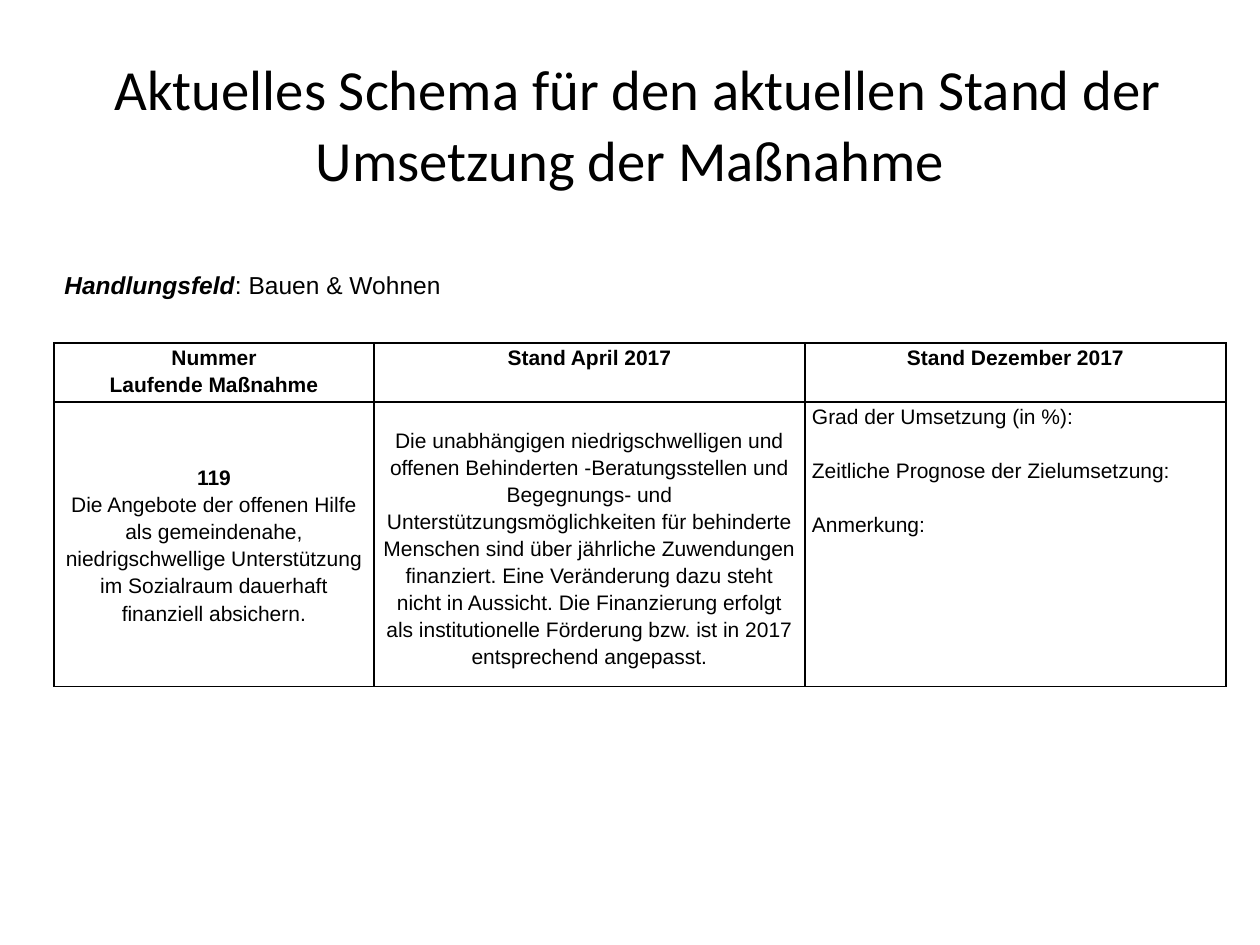
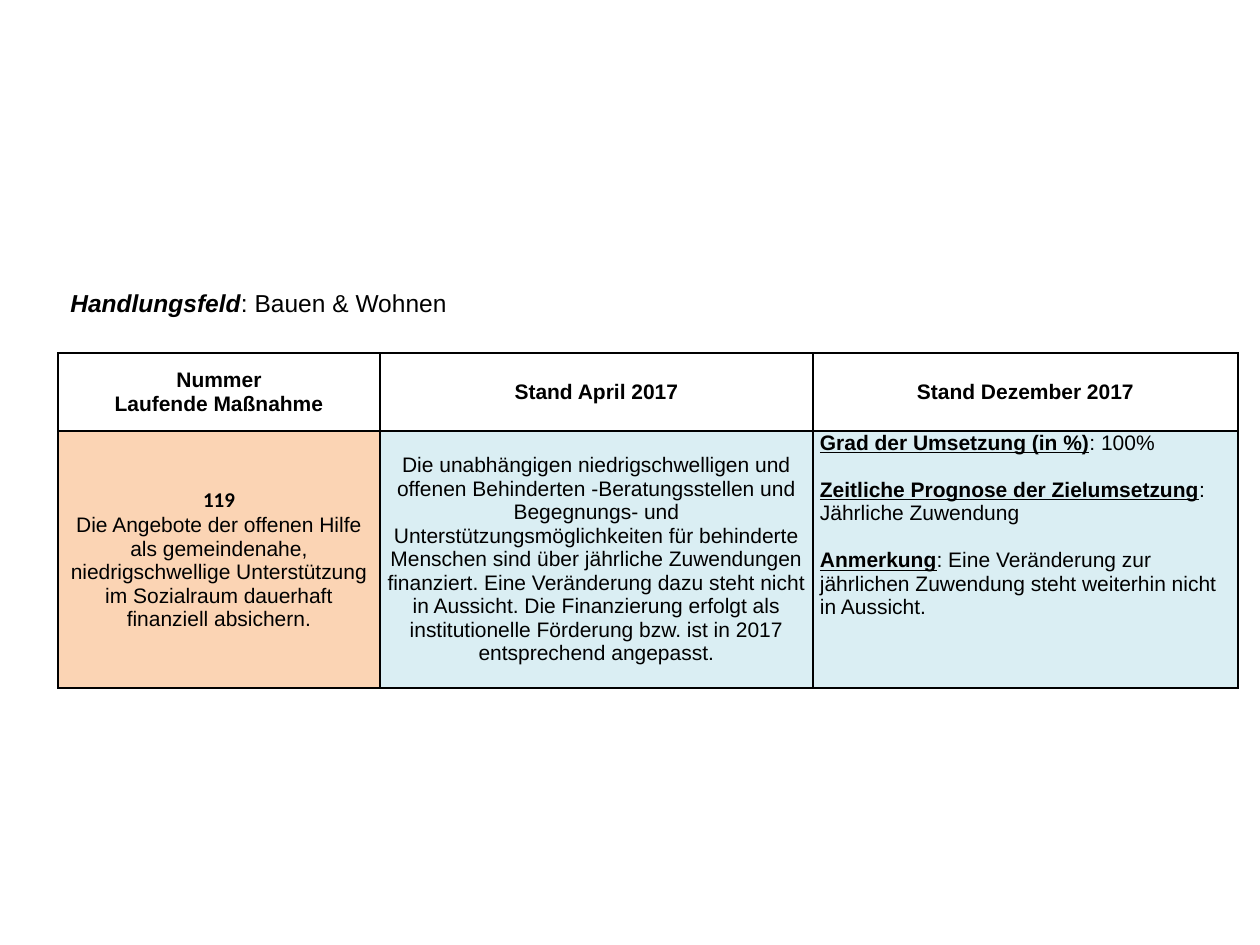
from lxml import etree
from pptx import Presentation, util as u
from pptx.dml.color import RGBColor
from pptx.enum import text as t
from pptx.oxml import ns

PX = 914400 / 126
HUES = {"ink": "000000", "peach": "FBD4B4", "sky": "DAEEF3"}
MID, TOP = t.MSO_ANCHOR.MIDDLE, t.MSO_ANCHOR.TOP
CENTER, LEFT = t.PP_ALIGN.CENTER, t.PP_ALIGN.LEFT

TITLE = "Aktuelles Schema für den aktuellen Stand der Umsetzung der Maßnahme"
HEADS = [["Nummer", "Laufende Maßnahme"], ["Stand April 2017"], ["Stand Dezember 2017"]]
TASK = ("Die Angebote der offenen Hilfe als gemeindenahe, niedrigschwellige "
        "Unterstützung im Sozialraum dauerhaft finanziell absichern.")
APRIL = ("Die unabhängigen niedrigschwelligen und offenen Behinderten -Beratungsstellen "
         "und Begegnungs- und Unterstützungsmöglichkeiten für behinderte Menschen sind "
         "über jährliche Zuwendungen finanziert. Eine Veränderung dazu steht nicht in "
         "Aussicht. Die Finanzierung erfolgt als institutionelle Förderung bzw. ist in "
         "2017 entsprechend angepasst.")
POINTS = {
    "Grad der Umsetzung (in %)": " 100%",
    "Zeitliche Prognose der Zielumsetzung": " Jährliche Zuwendung",
    "Anmerkung": " Eine Veränderung zur jährlichen Zuwendung steht weiterhin nicht in Aussicht.",
}


def px(num):
    """Turn px into EMU."""
    return u.Emu(round(num * PX))


def run(words, size=12, face="Arial", bold=False, slant=False, under=False):
    """Describe one run of text."""
    return words, size, face, bold, slant, under


def write(frame, paras, align=LEFT, space=1.0, gap=0):
    """Fill a text frame with paragraphs, each a list of runs."""
    for num, runs in enumerate(paras):
        para = frame.add_paragraph() if num else frame.paragraphs[0]
        para.alignment, para.line_spacing = align, space
        para.space_before = u.Pt(gap if num else 0)
        for words, size, face, bold, slant, under in runs:
            part = para.add_run()
            part.text = words
            font = part.font
            font.size, font.name = u.Pt(size), face
            font.bold, font.italic, font.underline = bold, slant, under
            font.color.rgb = RGBColor.from_string(HUES["ink"])


def add_box(slide, rect, runs, align=LEFT):
    """Add a wrapped text box with one paragraph."""
    frame = slide.shapes.add_textbox(*map(px, rect)).text_frame
    frame.word_wrap, frame.vertical_anchor = True, MID
    write(frame, [runs], align)


def add_field(slide, rect):
    """Add the line that names the field of action."""
    add_box(slide, rect, [run("Handlungsfeld", 14, bold=True, slant=True),
                          run(": Bauen & Wohnen", 14)])


def rule(cell):
    """Draw a thin line on all four sides of a cell."""
    props = cell._tc.get_or_add_tcPr()
    for num, side in enumerate("LRTB"):
        line = etree.Element(ns.qn(f"a:ln{side}"), w=str(u.Pt(1)))
        fill = etree.SubElement(line, ns.qn("a:solidFill"))
        etree.SubElement(fill, ns.qn("a:srgbClr"), val=HUES["ink"])
        props.insert(num, line)


def fill_cell(cell, paras, hue=None, anchor=MID, top=0, **style):
    """Set the text, fill and lines of a cell."""
    cell.margin_left = cell.margin_right = px(7)
    cell.margin_top, cell.margin_bottom = px(top), 0
    cell.vertical_anchor = anchor
    write(cell.text_frame, paras, **style)
    if hue:
        cell.fill.solid()
        cell.fill.fore_color.rgb = RGBColor.from_string(HUES[hue])
    else:
        cell.fill.background()
    rule(cell)


def add_grid(slide, left, top, cols, rows, anchor, space):
    """Add the status table with its header row and return it."""
    rect = map(px, (left, top, sum(cols), sum(rows)))
    grid = slide.shapes.add_table(len(rows), len(cols), *rect).table
    grid.first_row = grid.horz_banding = False
    for col, wide in zip(grid.columns, cols):
        col.width = px(wide)
    for row, tall in zip(grid.rows, rows):
        row.height = px(tall)
    for num, lines in enumerate(HEADS):
        fill_cell(grid.cell(0, num), [[run(line, bold=True)] for line in lines],
                  anchor=anchor, align=CENTER, space=space)
    return grid


def add_plan(slide):
    """Build the slide with the empty scheme."""
    add_box(slide, (63, 38, 1134, 158),
            [run(" ", 39.6, "Calibri"), run(TITLE, 32.4, "Calibri")], CENTER)
    grid = add_grid(slide, 54, 343, (320, 431, 421), (59, 267), TOP, 1.15)
    fill_cell(grid.cell(1, 0), [[run("119", bold=True)], [run(TASK)]],
              align=CENTER, space=1.15)
    fill_cell(grid.cell(1, 1), [[run(APRIL)]], anchor=TOP, top=24,
              align=CENTER, space=1.15)
    fill_cell(grid.cell(1, 2), [[run(f"{name}:")] for name in POINTS],
              anchor=TOP, space=1.15, gap=15.4)
    add_field(slide, (52, 263, 1123, 43))


def add_state(slide):
    """Build the slide with the completed scheme."""
    grid = add_grid(slide, 58, 353, (322, 433, 425), (78, 257), MID, 1.0)
    fill_cell(grid.cell(1, 0), [[run("119", face="Calibri", bold=True)], [run(TASK)]],
              "peach", align=CENTER)
    fill_cell(grid.cell(1, 1), [[run(APRIL)]], "sky", align=CENTER)
    fill_cell(grid.cell(1, 2),
              [[run(name, bold=True, under=True), run(f":{state}")]
               for name, state in POINTS.items()],
              "sky", anchor=TOP, gap=13.5)
    add_field(slide, (58, 271, 1123, 63))


def main():
    """Build and save both slides."""
    deck = Presentation()
    deck.slide_width, deck.slide_height = px(1260), px(945)
    for build in (add_plan, add_state):
        build(deck.slides.add_slide(deck.slide_layouts[6]))
    deck.save("out.pptx")


if __name__ == "__main__":
    main()
